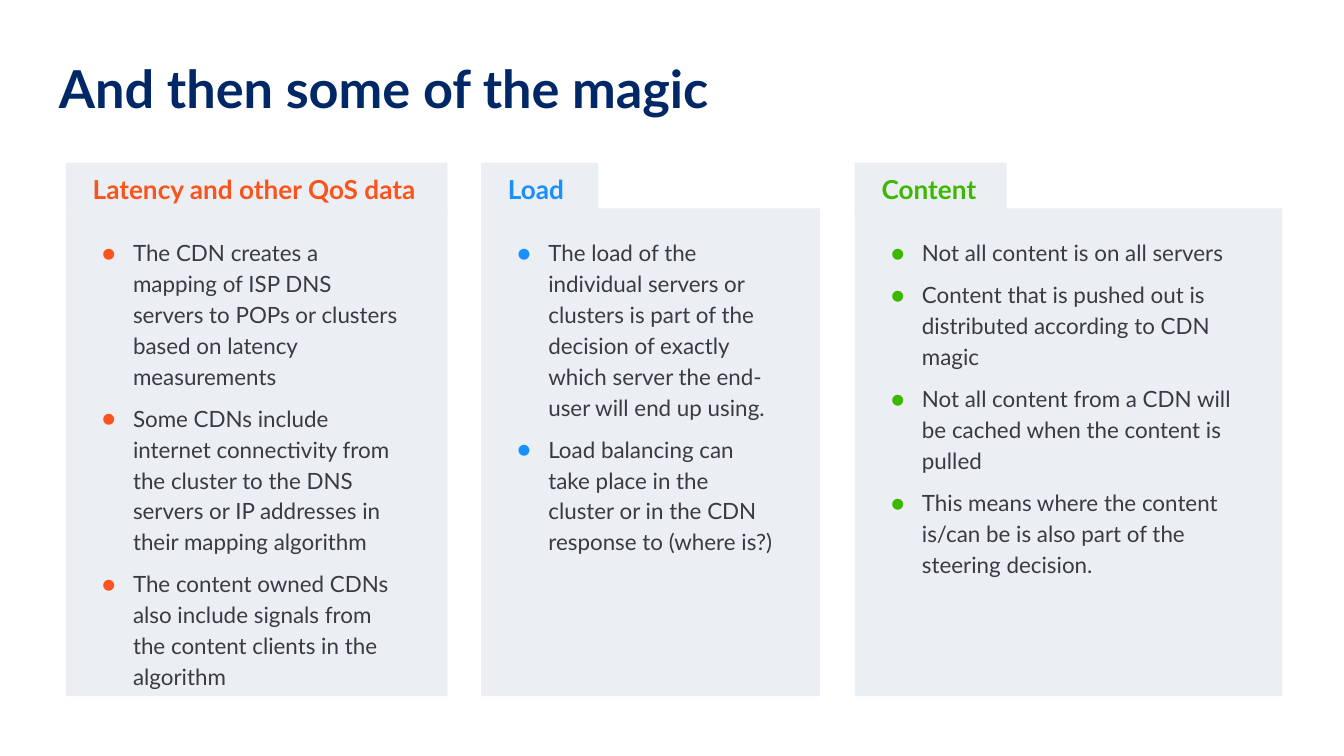
from dataclasses import dataclass

import pptx
import pptx.dml.color
import pptx.enum.shapes
import pptx.enum.text
import pptx.oxml.ns
import pptx.util
from lxml import etree
from pptx.util import Inches

FONT = "Lato"
NAVY = "002766"
BODY_TEXT = "393A45"
PANEL_FILL = "EBEFF3"
TAB_TOP, TAB_HEIGHT = 1.21, 0.4
PANEL_TOP, PANEL_HEIGHT = 1.55, 3.63


@dataclass
class Column:
    heading: str
    color: str
    left: float
    width: float
    tab_width: float
    bullets: list[str]


COLUMNS = [
    Column("Latency and other QoS data", "FA541C", 0.49, 2.84, 2.84, [
        "The CDN creates a mapping of ISP DNS servers to POPs or clusters "
        "based on latency measurements",
        "Some CDNs include internet connectivity from the cluster to the DNS "
        "servers or IP addresses in their mapping algorithm",
        "The content owned CDNs also include signals from the content clients "
        "in the algorithm",
    ]),
    Column("Load", "1890FF", 3.58, 2.52, 0.87, [
        "The load of the individual servers or clusters is part of the "
        "decision of exactly which server the end-user will end up using.",
        "Load balancing can take place in the cluster or in the CDN response "
        "to (where is?)",
    ]),
    Column("Content", "3DB800", 6.36, 3.18, 1.13, [
        "Not all content is on all servers",
        "Content that is pushed out is distributed according to CDN magic",
        "Not all content from a CDN will be cached when the content is pulled",
        "This means where the content is/can be is also part of the steering "
        "decision.",
    ]),
]


def rgb(color: str) -> pptx.dml.color.RGBColor:
    return pptx.dml.color.RGBColor.from_string(color)


def set_margins(text_frame, left: float, top: float, right: float, bottom: float) -> None:
    text_frame.word_wrap = True
    text_frame.margin_left = Inches(left)
    text_frame.margin_top = Inches(top)
    text_frame.margin_right = Inches(right)
    text_frame.margin_bottom = Inches(bottom)


def format_paragraph(paragraph, size: float, color: str, bold: bool = False) -> None:
    paragraph.alignment = pptx.enum.text.PP_ALIGN.LEFT
    for run in paragraph.runs:
        run.font.name = FONT
        run.font.size = pptx.util.Pt(size)
        run.font.bold = bold
        run.font.color.rgb = rgb(color)


def add_bullet(paragraph, color: str) -> None:
    """Give the paragraph a coloured dot with a hanging indent."""
    qn = pptx.oxml.ns.qn
    properties = paragraph._p.get_or_add_pPr()
    properties.set("marL", str(Inches(0.3)))
    properties.set("indent", str(Inches(-0.23)))
    bullet_color = etree.SubElement(properties, qn("a:buClr"))
    etree.SubElement(bullet_color, qn("a:srgbClr"), val=color)
    etree.SubElement(properties, qn("a:buFont"), typeface=FONT)
    etree.SubElement(properties, qn("a:buChar"), char="●")


def add_rectangle(slide, left: float, top: float, width: float, height: float):
    shape = slide.shapes.add_shape(
        pptx.enum.shapes.MSO_SHAPE.RECTANGLE,
        Inches(left), Inches(top), Inches(width), Inches(height))
    shape.shadow.inherit = False
    shape.fill.solid()
    shape.fill.fore_color.rgb = rgb(PANEL_FILL)
    shape.line.fill.background()
    return shape


def add_title(slide, text: str) -> None:
    text_box = slide.shapes.add_textbox(Inches(0.34), Inches(0.32), Inches(9.32), Inches(0.63))
    text_frame = text_box.text_frame
    set_margins(text_frame, 0.1, 0.1, 0.1, 0.1)
    text_frame.text = text
    format_paragraph(text_frame.paragraphs[0], 28, NAVY, bold=True)


def add_panel(slide, column: Column) -> None:
    panel = add_rectangle(slide, column.left, PANEL_TOP, column.width, PANEL_HEIGHT)
    text_frame = panel.text_frame
    set_margins(text_frame, 0.2, 0.2, 0.3, 0.1)
    text_frame.vertical_anchor = pptx.enum.text.MSO_ANCHOR.TOP
    text_frame.text = "\n".join(column.bullets)
    for index, paragraph in enumerate(text_frame.paragraphs):
        add_bullet(paragraph, column.color)
        paragraph.line_spacing = 1.15
        paragraph.space_before = pptx.util.Pt(6 if index else 0)
        format_paragraph(paragraph, 12, BODY_TEXT)


def add_tab(slide, column: Column) -> None:
    tab = add_rectangle(slide, column.left, TAB_TOP, column.tab_width, TAB_HEIGHT)
    text_frame = tab.text_frame
    set_margins(text_frame, 0.2, 0.1, 0.1, 0.1)
    text_frame.vertical_anchor = pptx.enum.text.MSO_ANCHOR.MIDDLE
    text_frame.text = column.heading
    format_paragraph(text_frame.paragraphs[0], 14, column.color, bold=True)


def main() -> None:
    presentation = pptx.Presentation()
    presentation.slide_width = Inches(10)
    presentation.slide_height = Inches(10 * 9 / 16)
    slide = presentation.slides.add_slide(presentation.slide_layouts[6])
    add_title(slide, "And then some of the magic")
    for column in COLUMNS:
        add_panel(slide, column)
        add_tab(slide, column)
    presentation.save("out.pptx")


if __name__ == "__main__":
    main()
